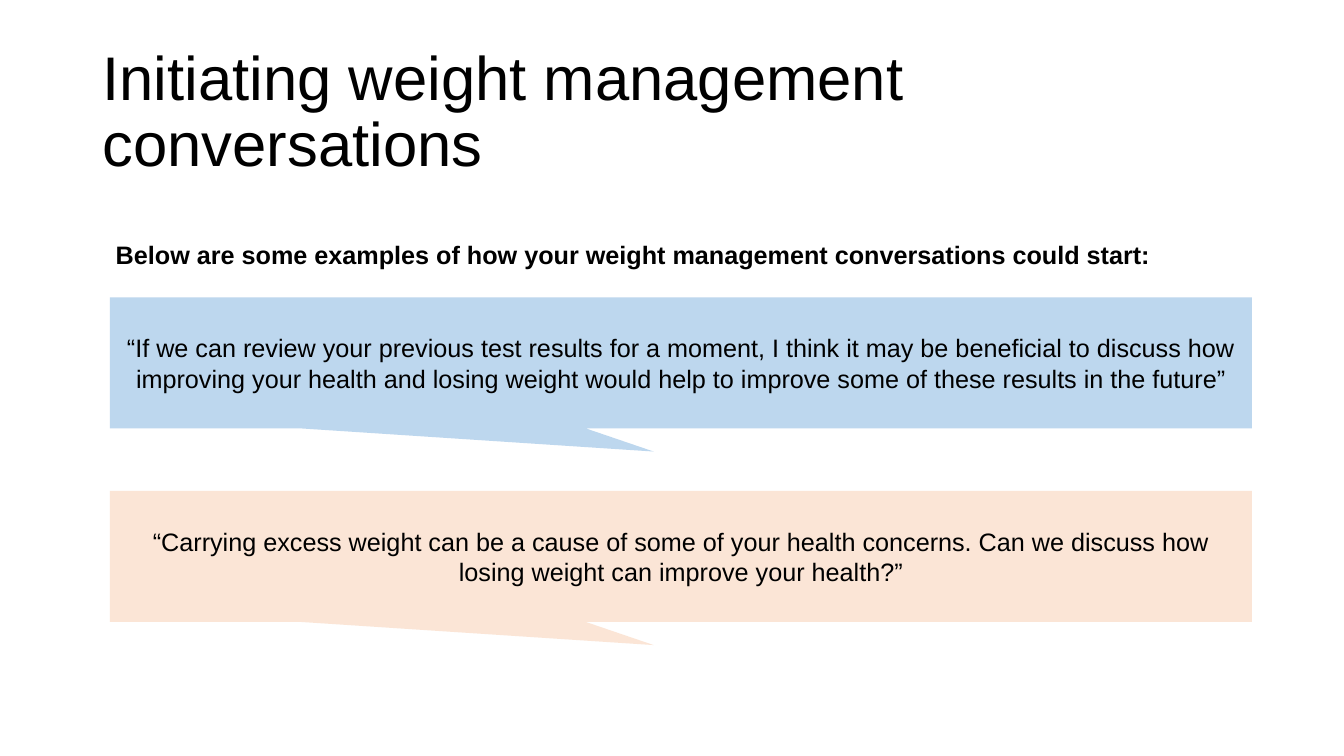
from pptx import Presentation
from pptx.dml.color import RGBColor
from pptx.enum.shapes import MSO_SHAPE
from pptx.enum.text import MSO_ANCHOR, PP_ALIGN
from pptx.util import Inches, Pt

CALLOUT = MSO_SHAPE.RECTANGULAR_CALLOUT
TOP, MIDDLE = MSO_ANCHOR.TOP, MSO_ANCHOR.MIDDLE
LEFT, CENTER = PP_ALIGN.LEFT, PP_ALIGN.CENTER

BLACK = RGBColor(0x00, 0x00, 0x00)
PALE_BLUE = RGBColor(0xBD, 0xD7, 0xEE)
PALE_ORANGE = RGBColor(0xFB, 0xE5, 0xD6)

GRID = Inches(0.1)
PAGE_COLUMNS, PAGE_ROWS = 133.33, 75
RIGHT_EDGE = 124.2
CALLOUT_LEFT, CALLOUT_TOP = 10.9, 29.5
CALLOUT_ROWS, CALLOUT_STEP = 13, 19.2
TAIL_COLUMNS, TAIL_ROWS = -2.7, 8.8

TITLE = "Initiating weight management conversations"
INTRO = (
    "Below are some examples of how your weight management "
    "conversations could start:"
)
QUOTES = [
    (
        "“If we can review your previous test results for a moment, "
        "I think it may be beneficial to discuss how improving your health "
        "and losing weight would help to improve some of these results "
        "in the future”",
        PALE_BLUE,
    ),
    (
        "“Carrying excess weight can be a cause of some of your health "
        "concerns. Can we discuss how losing weight can improve your health?”",
        PALE_ORANGE,
    ),
]


def grid_area(left, top, rows):
    return [round(cells * GRID) for cells in (left, top, RIGHT_EDGE - left, rows)]


def set_all(target, values):
    for name, value in values.items():
        setattr(target, name, value)


def write(shape, text, size=18, bold=False, anchor=TOP, align=LEFT, spacing=1.0):
    frame = shape.text_frame
    set_all(frame, {"word_wrap": True, "vertical_anchor": anchor})
    para = frame.paragraphs[0]
    set_all(para, {"alignment": align, "line_spacing": spacing})
    span = para.add_run()
    span.text = text
    set_all(span.font, {"name": "Arial", "size": Pt(size), "bold": bold})
    span.font.color.rgb = BLACK


def add_text(page, area, text, **style):
    write(page.shapes.add_textbox(*area), text, **style)


def add_callout(page, area, text, colour):
    callout = page.shapes.add_shape(CALLOUT, *area)
    callout.shadow.inherit = False
    callout.fill.solid()
    callout.fill.fore_color.rgb = colour
    callout.line.fill.background()
    callout.adjustments[0] = TAIL_COLUMNS * GRID / callout.width
    callout.adjustments[1] = TAIL_ROWS * GRID / callout.height
    write(callout, text, anchor=MIDDLE, align=CENTER)


def main():
    deck = Presentation()
    set_all(deck, {
        "slide_width": round(PAGE_COLUMNS * GRID),
        "slide_height": PAGE_ROWS * GRID,
    })
    page = deck.slides.add_slide(deck.slide_layouts[6])
    add_text(page, grid_area(9.2, 4, 14.5), TITLE,
             size=44, anchor=MIDDLE, spacing=0.9)
    add_text(page, grid_area(10.5, 23.3, 4), INTRO, bold=True)
    for index, (quote, colour) in enumerate(QUOTES):
        top = CALLOUT_TOP + index * CALLOUT_STEP
        add_callout(page, grid_area(CALLOUT_LEFT, top, CALLOUT_ROWS), quote, colour)
    deck.save("out.pptx")


if __name__ == "__main__":
    main()
